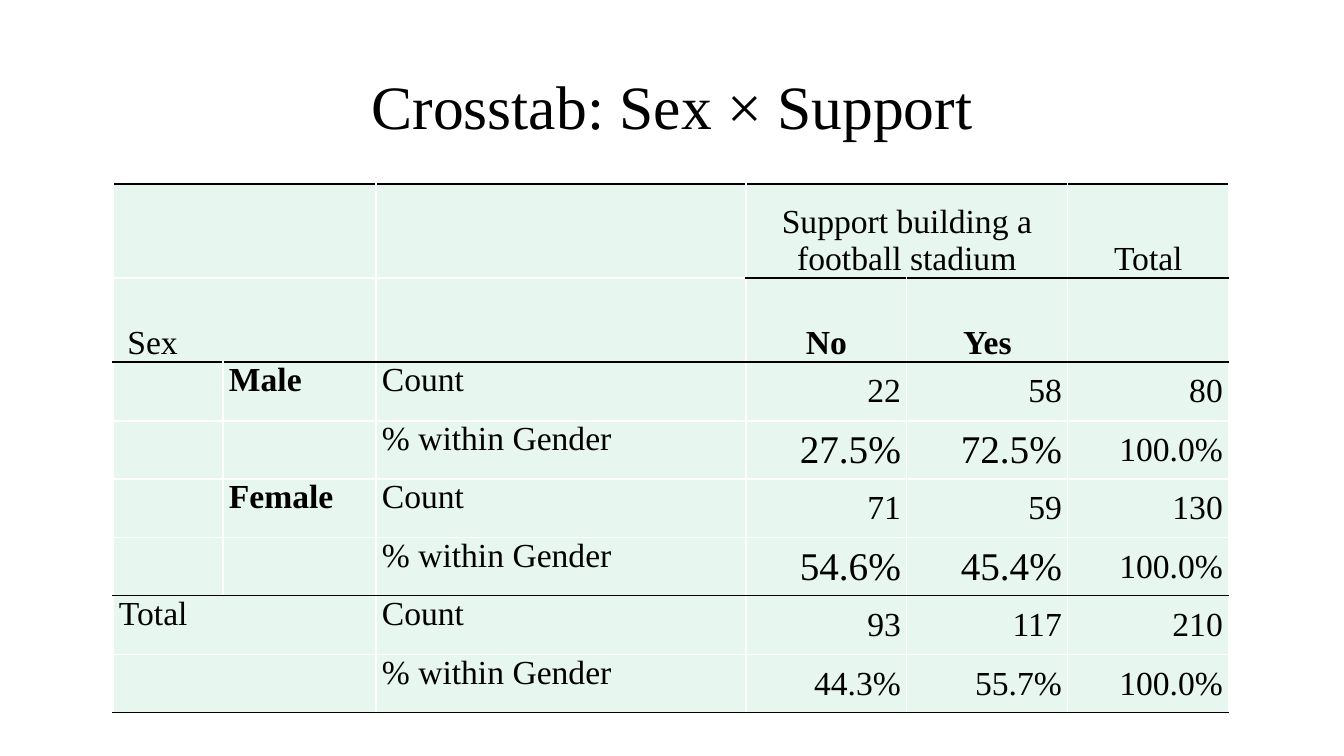
from dataclasses import dataclass

from lxml import etree
from pptx import Presentation
from pptx import util as u
from pptx.dml.color import RGBColor
from pptx.enum import text
from pptx.oxml.ns import qn

PX = 914400 / 100.8
LEFT, CENTER, RIGHT = text.PP_ALIGN.LEFT, text.PP_ALIGN.CENTER, text.PP_ALIGN.RIGHT
TOP, MIDDLE, BOTTOM = text.MSO_ANCHOR.TOP, text.MSO_ANCHOR.MIDDLE, text.MSO_ANCHOR.BOTTOM


def px(length):
    return u.Emu(round(length * PX))


@dataclass(frozen=True)
class Theme:
    font: str = "Times New Roman"
    ink: str = "000000"
    grid: str = "FFFFFF"
    mint: str = "E7F6EF"
    title_size: int = 44
    body_size: int = 24
    key_size: int = 28
    rule_width: int = 1


class SlideBuilder:
    def __init__(self, slide, theme):
        self.slide = slide
        self.theme = theme

    def set_words(self, frame, words, size, align, bold=False):
        frame.text = words
        paragraph = frame.paragraphs[0]
        paragraph.alignment = align
        for font in (paragraph.font, *(run.font for run in paragraph.runs)):
            font.name = self.theme.font
            font.size = u.Pt(size)
            font.bold = bold
            font.color.rgb = RGBColor.from_string(self.theme.ink)

    def title(self, words, left, top, width, height):
        frame = self.slide.shapes.add_textbox(px(left), px(top), px(width), px(height)).text_frame
        frame.word_wrap = True
        frame.vertical_anchor = MIDDLE
        self.set_words(frame, words, self.theme.title_size, CENTER)

    def table(self, left, top, widths, heights):
        grid = self.slide.shapes.add_table(
            len(heights), len(widths), px(left), px(top), px(sum(widths)), px(sum(heights))).table
        grid.first_row = grid.horz_banding = False
        for column, width in zip(grid.columns, widths):
            column.width = px(width)
        for row, height in zip(grid.rows, heights):
            row.height = px(height)
        return grid

    def cell(self, cell, words, size, align, anchor, bold, top_rule, bottom_rule):
        cell.margin_left = cell.margin_right = px(6)
        cell.margin_top = cell.margin_bottom = 0
        cell.vertical_anchor = anchor
        self.set_words(cell.text_frame, words, size, align, bold)
        # Borders precede the fill in the cell properties
        for side, ruled in (("L", False), ("R", False), ("T", top_rule), ("B", bottom_rule)):
            self.border(cell, side, self.theme.ink if ruled else self.theme.grid)
        cell.fill.solid()
        cell.fill.fore_color.rgb = RGBColor.from_string(self.theme.mint)

    def border(self, cell, side, color):
        line = etree.SubElement(cell._tc.get_or_add_tcPr(), qn(f"a:ln{side}"),
                                w=str(u.Pt(self.theme.rule_width)))
        fill = etree.SubElement(line, qn("a:solidFill"))
        etree.SubElement(fill, qn("a:srgbClr"), val=color)


# Crosstab content
PERCENT = "% within Gender"
CROSSTAB = [
    ["", "", "", "Support building a football stadium", "", "Total"],
    [" Sex", "", "", "No", "Yes", ""],
    ["", "Male", "Count", "22", "58", "80"],
    ["", "", PERCENT, "27.5%", "72.5%", "100.0%"],
    ["", "Female", "Count", "71", "59", "130"],
    ["", "", PERCENT, "54.6%", "45.4%", "100.0%"],
    ["Total", "", "Count", "93", "117", "210"],
    ["", "", PERCENT, "44.3%", "55.7%", "100.0%"],
]
MERGED_PAIRS = [(0, 0), (0, 3), (1, 0), (6, 0), (7, 0)]
HEADER_ROWS = 2
FIRST_VALUE_COLUMN = 3
RULED_ROWS = {1, 5, 7}
BOLD_LABELS = {"No", "Yes", "Male", "Female"}
KEY_CELLS = {(row, column) for row in (3, 5) for column in (3, 4)}


def ruled_below(row, column):
    if row == 0:
        return column >= FIRST_VALUE_COLUMN
    return row < 0 or row in RULED_ROWS


def placement(row, column):
    is_value = column >= FIRST_VALUE_COLUMN
    if row < HEADER_ROWS:
        return (CENTER if is_value else LEFT), BOTTOM
    return (RIGHT, MIDDLE) if is_value else (LEFT, TOP)


def main():
    theme = Theme()
    deck = Presentation()
    deck.slide_width, deck.slide_height = px(1344), px(756)
    builder = SlideBuilder(deck.slides.add_slide(deck.slide_layouts[6]), theme)

    # Title
    builder.title("Crosstab: Sex × Support", 244, 42, 857, 126)

    # Crosstab
    crosstab = builder.table(113, 184, [110, 153, 370] + [161] * 3, [94, 84] + [59, 58] * 3)
    for row, column in MERGED_PAIRS:
        crosstab.cell(row, column).merge(crosstab.cell(row, column + 1))
    for row, entries in enumerate(CROSSTAB):
        for column, words in enumerate(entries):
            size = theme.key_size if (row, column) in KEY_CELLS else theme.body_size
            align, anchor = placement(row, column)
            builder.cell(crosstab.cell(row, column), words, size, align, anchor,
                         words in BOLD_LABELS, ruled_below(row - 1, column),
                         ruled_below(row, column))

    deck.save("out.pptx")


if __name__ == "__main__":
    main()
